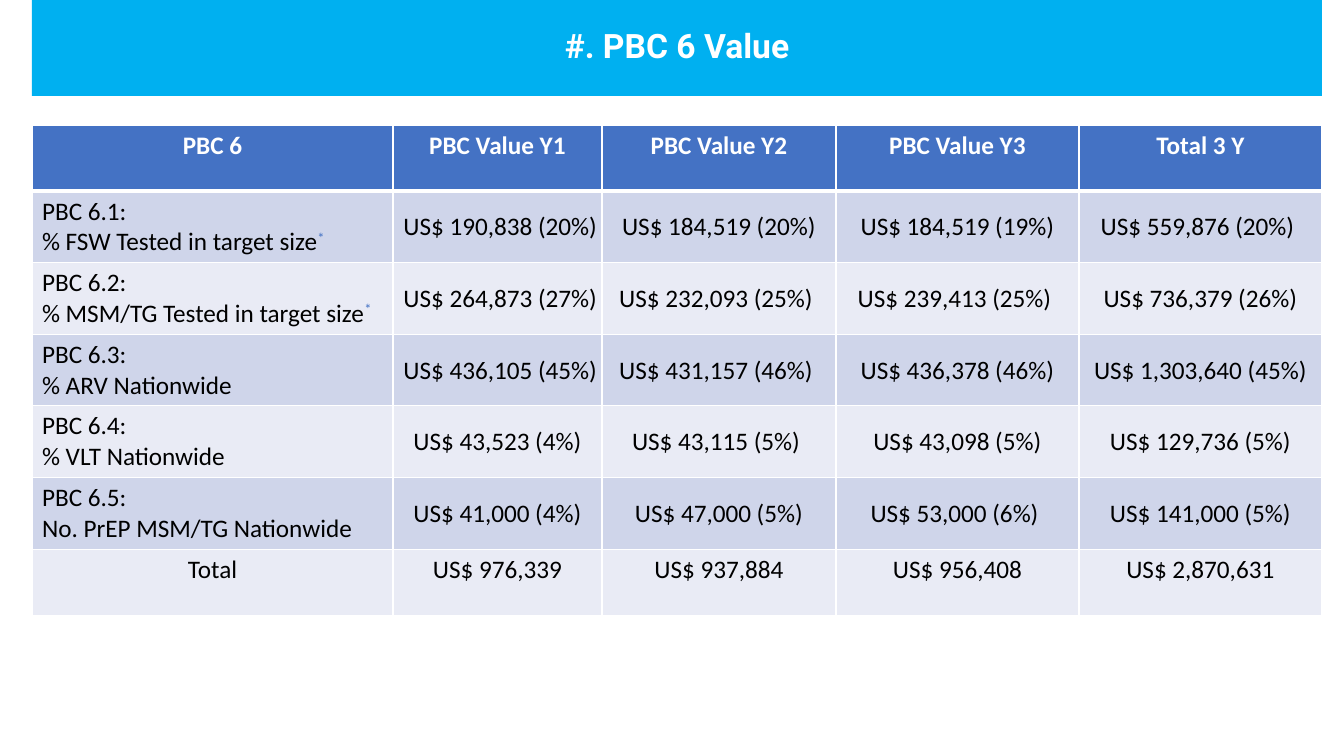
from lxml import etree
from pptx import Presentation
from pptx.dml.color import RGBColor
from pptx.enum.text import MSO_ANCHOR, PP_ALIGN
from pptx.oxml.ns import qn
from pptx.util import Pt

CENTER, JUSTIFY = PP_ALIGN.CENTER, PP_ALIGN.JUSTIFY
TOP, MIDDLE = MSO_ANCHOR.TOP, MSO_ANCHOR.MIDDLE

TITLE = "#. PBC 6 Value"
HEADER = ["PBC 6", "PBC Value Y1", "PBC Value Y2", "PBC Value Y3", "Total 3 Y"]
INDICATORS = [
    (["PBC 6.1: ", "% FSW Tested in target size*"],
     " US$ 190,838 (20%)", "US$ 184,519 (20%)", "US$ 184,519 (19%)", "US$ 559,876 (20%) "),
    (["PBC 6.2:", "% MSM/TG Tested in target size*"],
     " US$ 264,873 (27%)", "US$ 232,093 (25%) ", "US$ 239,413 (25%) ", "US$ 736,379 (26%)"),
    (["PBC 6.3:", "% ARV Nationwide"],
     " US$ 436,105 (45%)", "US$ 431,157 (46%) ", "US$ 436,378 (46%)", "US$ 1,303,640 (45%)"),
    (["PBC 6.4:", "% VLT Nationwide"],
     "US$ 43,523 (4%)", "US$ 43,115 (5%) ", "US$ 43,098 (5%)", "US$ 129,736 (5%)"),
    (["PBC 6.5:", "No. PrEP MSM/TG Nationwide"],
     "US$ 41,000 (4%)", "US$ 47,000 (5%)", "US$ 53,000 (6%) ", "US$ 141,000 (5%)"),
]
TOTALS = ["Total", "US$ 976,339", "US$ 937,884", "US$ 956,408", "US$ 2,870,631"]

COLORS = {"banner": "00B0F0", "header": "4472C4", "band": "CFD5EA",
          "light": "E9EBF5", "white": "FFFFFF", "black": "000000"}
COLUMNS = [361, 209, 234, 243, 243]
LEFT, TABLE_TOP, ROW_HEIGHT, BANNER_HEIGHT = 32, 125, 66, 96
SLIDE_WIDTH, SLIDE_HEIGHT = 1344, 756


def px(n):
    return round(n * 914400 / 100.8)


def rgb(name):
    return RGBColor.from_string(COLORS[name])


def write(tf, lines, size=18, font="Calibri", color="black", bold=False, align=CENTER):
    for i, line in enumerate(lines):
        p = tf.paragraphs[0] if i == 0 else tf.add_paragraph()
        p.alignment = align
        body, star, _ = line.partition("*")
        for text in filter(None, (body, star)):
            r = p.add_run()
            r.text = text
            r.font.size, r.font.name, r.font.bold = Pt(size), font, bold
            r.font.color.rgb = rgb("header" if text == "*" else color)
            if text == "*":
                r.font._element.set("baseline", "30000")


def add_borders(cell, bottom):
    tcPr = cell._tc.get_or_add_tcPr()
    for side, width in (("L", 1), ("R", 1), ("T", 1), ("B", bottom)):
        ln = etree.SubElement(tcPr, qn(f"a:ln{side}"), w=str(Pt(width)))
        fill = etree.SubElement(ln, qn("a:solidFill"))
        etree.SubElement(fill, qn("a:srgbClr"), val=COLORS["white"])


prs = Presentation()
prs.slide_width, prs.slide_height = px(SLIDE_WIDTH), px(SLIDE_HEIGHT)
s = prs.slides.add_slide(prs.slide_layouts[5])

rows = [HEADER, *INDICATORS, TOTALS]
width = sum(COLUMNS)
frame = s.shapes.add_table(len(rows), len(COLUMNS), px(LEFT), px(TABLE_TOP),
                           px(width), px(ROW_HEIGHT * len(rows)))
table = frame.table
for column, w in zip(table.columns, COLUMNS):
    column.width = px(w)

for i, row in enumerate(rows):
    table.rows[i].height = px(ROW_HEIGHT)
    is_header = i == 0
    is_indicator = 0 < i < len(rows) - 1
    for j, content in enumerate(row):
        cell = table.cell(i, j)
        add_borders(cell, 3 if is_header else 1)
        cell.fill.solid()
        cell.fill.fore_color.rgb = rgb("header" if is_header else "band" if i % 2 else "light")
        is_value = is_indicator and j > 0
        cell.vertical_anchor = MIDDLE if is_value else TOP
        if is_value:
            cell.margin_left = cell.margin_right = cell.margin_top = px(1)
            cell.margin_bottom = 0
        write(cell.text_frame, content if isinstance(content, list) else [content],
              color="white" if is_header else "black", bold=is_header,
              align=JUSTIFY if is_indicator and j == 0 else CENTER)

title = s.shapes.title
title.left, title.top, title.width, title.height = px(LEFT), 0, px(width), px(BANNER_HEIGHT)
title.fill.solid()
title.fill.fore_color.rgb = rgb("banner")
tf = title.text_frame
tf.vertical_anchor = MIDDLE
write(tf, [TITLE], size=24, font="Roboto", color="white", bold=True)
tf.paragraphs[0].line_spacing = 0.9

prs.save("out.pptx")
